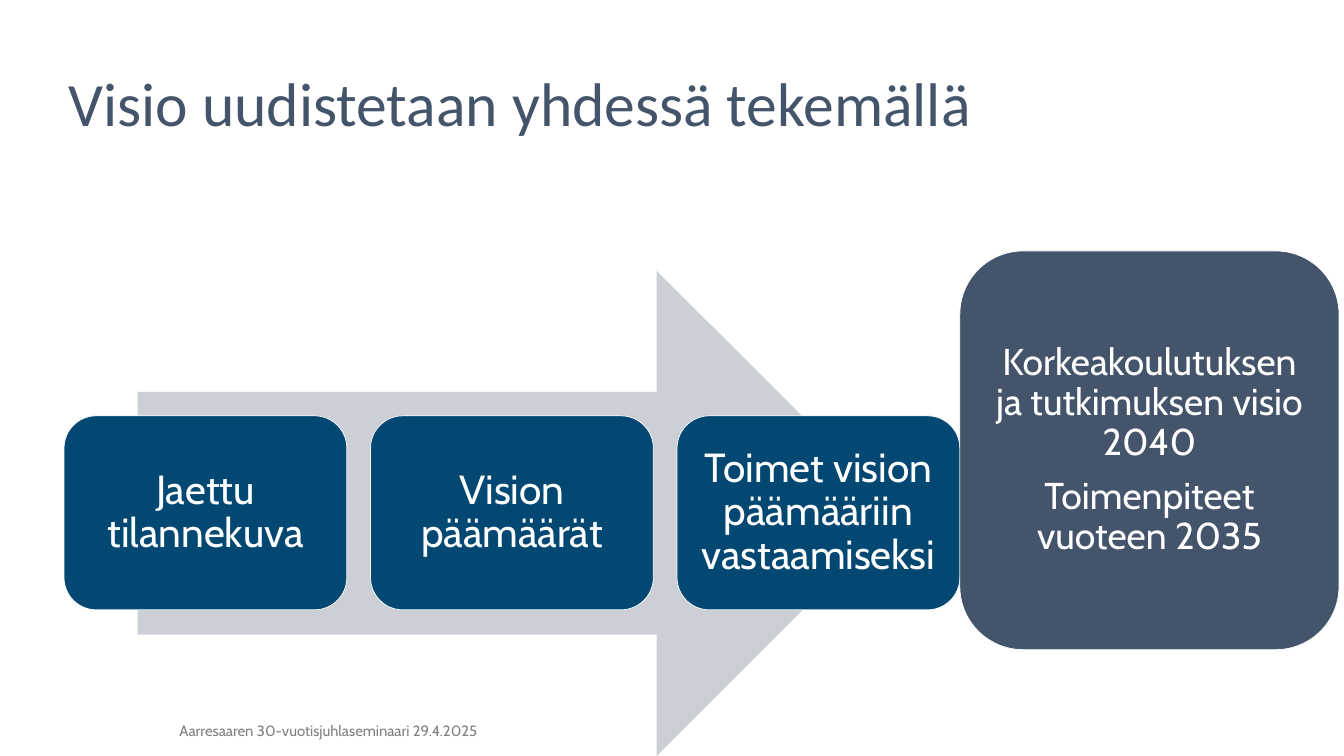
"""Build the slide on renewing the vision together."""
import pptx
import pptx.dml.color
import pptx.enum.shapes
import pptx.enum.text
import pptx.util

WIDTH, HEIGHT = 26.66, 15
COLORS = {
    "slate": "44546A",
    "step": "024873",
    "arrow": "CCCFD5",
    "white": "FFFFFF",
    "footer": "808080",
}
STEPS = [
    "Jaettu tilannekuva",
    "Vision päämäärät",
    "Toimet vision päämääriin vastaamiseksi",
]
GOALS = "Korkeakoulutuksen ja tutkimuksen visio 2040\nToimenpiteet vuoteen 2035"
STEP_LEFT, STEP_TOP, STEP_WIDTH, STEP_HEIGHT = 1.27, 8.25, 5.61, 3.85
STEP_PITCH = 6.08
CENTER = pptx.enum.text.PP_ALIGN.CENTER
LEFT = pptx.enum.text.PP_ALIGN.LEFT
SHAPES = pptx.enum.shapes.MSO_SHAPE


def color(name):
    """Return the named colour."""
    return pptx.dml.color.RGBColor.from_string(COLORS[name])


def inches(*lengths):
    """Convert lengths in inches."""
    return [pptx.util.Inches(length) for length in lengths]


def write(frame, text, size, font, ink, align=LEFT, spacing=0.9, gap=0):
    """Fill a text frame and format its runs, with a gap between paragraphs."""
    frame.text = text
    frame.word_wrap = True
    frame.auto_size = pptx.enum.text.MSO_AUTO_SIZE.NONE
    frame.vertical_anchor = pptx.enum.text.MSO_ANCHOR.MIDDLE
    for paragraph in frame.paragraphs:
        paragraph.alignment = align
        paragraph.line_spacing = spacing
        for run in paragraph.runs:
            run.font.size = pptx.util.Pt(size)
            run.font.name = font
            run.font.color.rgb = color(ink)
    for paragraph in frame.paragraphs[:-1]:
        paragraph.space_after = pptx.util.Pt(gap)


def add_title(slide, text):
    """Place and fill the title."""
    title = slide.shapes.title
    title.left, title.top, title.width, title.height = inches(1.26, 0.69, 23.98, 2.84)
    write(title.text_frame, text, 88, "Calibri", "slate")


def add_filled(slide, kind, box, fill):
    """Add a flat preset shape without an outline."""
    shape = slide.shapes.add_shape(kind, *inches(*box))
    shape.shadow.inherit = False
    shape.fill.solid()
    shape.fill.fore_color.rgb = color(fill)
    shape.line.fill.background()
    return shape


def add_card(slide, box, fill, text, size, inset):
    """Add a rounded card with a thin white outline and centred text."""
    card = add_filled(slide, SHAPES.ROUNDED_RECTANGLE, box, fill)
    card.line.color.rgb = color("white")
    card.line.width = pptx.util.Pt(1)
    frame = card.text_frame
    frame.margin_left = frame.margin_right = pptx.util.Inches(inset)
    frame.margin_top = frame.margin_bottom = pptx.util.Inches(inset)
    write(frame, text, size, "Cabin", "white", CENTER, gap=0.35 * size)


def add_footer(slide, text):
    """Add the event line at the bottom."""
    footer = slide.shapes.add_textbox(*inches(3.46, 14.21, 7.98, 0.56))
    write(footer.text_frame, text, 21.3, "Cabin", "footer", spacing=1)


def main():
    """Build and save the slide."""
    deck = pptx.Presentation()
    deck.slide_width, deck.slide_height = inches(WIDTH, HEIGHT)
    slide = deck.slides.add_slide(deck.slide_layouts[5])
    add_title(slide, "Visio uudistetaan yhdessä tekemällä")
    add_filled(slide, SHAPES.RIGHT_ARROW, (2.73, 5.37, 15.11, 9.63), "arrow")
    for column, step in enumerate(STEPS):
        box = (STEP_LEFT + column * STEP_PITCH, STEP_TOP, STEP_WIDTH, STEP_HEIGHT)
        add_card(slide, box, "step", step, 58, 0.24)
    add_card(slide, (19.04, 4.98, 7.52, 7.91), "slate", GOALS, 53.3, 0.16)
    add_footer(slide, "Aarresaaren 30-vuotisjuhlaseminaari 29.4.2025")
    deck.save("out.pptx")


if __name__ == "__main__":
    main()
